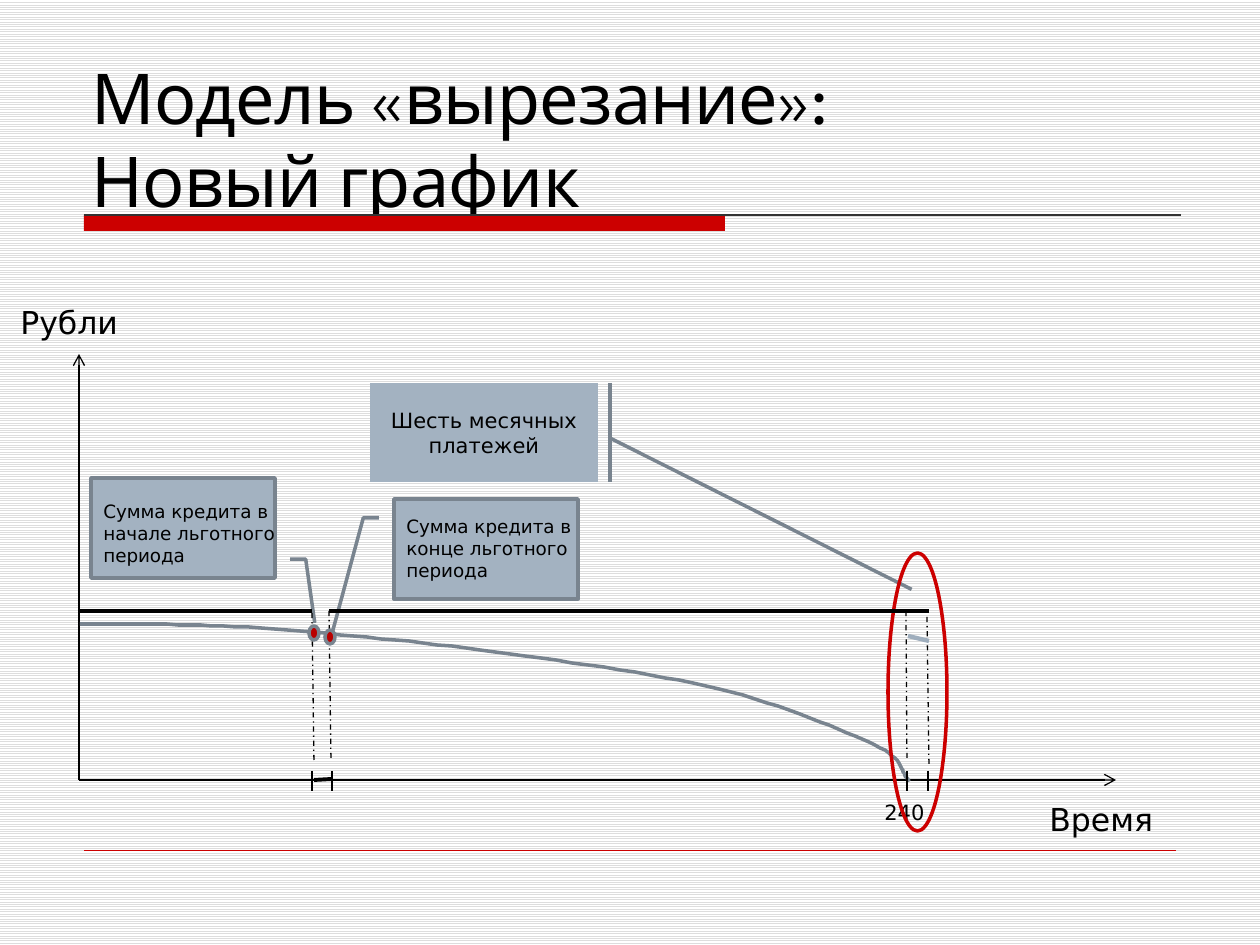
from dataclasses import dataclass

from lxml import etree
from pptx import Presentation
from pptx.dml.color import RGBColor
from pptx.enum.dml import MSO_LINE, MSO_PATTERN
from pptx.enum.shapes import MSO_CONNECTOR, MSO_SHAPE
from pptx.enum.text import MSO_ANCHOR, MSO_AUTO_SIZE, PP_ALIGN
from pptx.oxml.ns import qn
from pptx.util import Pt

PX = 914400 / 126
TITLE_ONLY = 5
STRAIGHT = MSO_CONNECTOR.STRAIGHT
DASH_DOT = MSO_LINE.DASH_DOT
OVAL = MSO_SHAPE.OVAL
RECTANGLE = MSO_SHAPE.RECTANGLE
BENT_CALLOUT = MSO_SHAPE.LINE_CALLOUT_2
ACCENT_CALLOUT = MSO_SHAPE.LINE_CALLOUT_1_ACCENT_BAR


@dataclass(frozen=True)
class Theme:
    ink: str = "000000"
    rule: str = "333333"
    red: str = "CC0000"
    dot: str = "B90000"
    panel: str = "A3B2C1"
    outline: str = "79848F"
    pale: str = "9FAEBD"
    stripe: str = "DDDDDD"
    paper: str = "FFFFFF"
    title_font: str = "League Spartan"
    body_font: str = "DejaVu Sans"
    title: float = 40
    axis: float = 18
    label: float = 12
    note: float = 10.5
    hair: float = 0.25
    thin: float = 0.75
    medium: float = 2
    thick: float = 2.25


def px(value):
    return round(value * PX)


def rgb(value):
    return RGBColor.from_string(value)


def bezier_points(start, segments, steps=16):
    """Points along a chain of cubic Bezier segments."""
    points = []
    for a, b, end in segments:
        for step in range(1, steps + 1):
            t = step / steps
            u = 1 - t
            points.append(tuple(
                u**3 * p + 3 * u * u * t * q + 3 * u * t * t * r + t**3 * s
                for p, q, r, s in zip(start, a, b, end)))
        start = end
    return points


class Canvas:
    """The current slide and the style it is drawn in."""

    def __init__(self, slide, theme):
        self.slide = slide
        self.shapes = slide.shapes
        self.theme = theme

    def background(self):
        fill = self.slide.background.fill
        fill.patterned()
        fill.pattern = MSO_PATTERN.LIGHT_HORIZONTAL
        fill.fore_color.rgb = rgb(self.theme.stripe)
        fill.back_color.rgb = rgb(self.theme.paper)

    def add_run(self, paragraph, text, size, font=None):
        run = paragraph.add_run()
        run.text = text
        run.font.size = Pt(size)
        run.font.name = font or self.theme.body_font
        run.font.color.rgb = rgb(self.theme.ink)
        return run

    def title(self, lines, x, y, w, h):
        title = self.shapes.title
        title.left, title.top, title.width, title.height = map(px, (x, y, w, h))
        frame = title.text_frame
        frame.auto_size = MSO_AUTO_SIZE.NONE
        frame.vertical_anchor = MSO_ANCHOR.TOP
        frame.margin_top, frame.margin_bottom = px(12), 0
        for index, line in enumerate(lines):
            paragraph = frame.add_paragraph() if index else frame.paragraphs[0]
            paragraph.alignment = PP_ALIGN.LEFT
            paragraph.line_spacing = Pt(self.theme.title * 1.2)
            run = self.add_run(paragraph, line, self.theme.title, self.theme.title_font)
            run._r.get_or_add_rPr().set("spc", "-40")

    def text(self, text, size, x, y, w, h):
        frame = self.shapes.add_textbox(*map(px, (x, y, w, h))).text_frame
        frame.word_wrap = True
        self.add_run(frame.paragraphs[0], text, size)

    def shape(self, kind, x, y, w, h, fill=None, line=None, adjustments=()):
        shape = self.shapes.add_shape(kind, *map(px, (x, y, w, h)))
        for index, value in enumerate(adjustments):
            shape.adjustments[index] = value
        if fill:
            shape.fill.solid()
            shape.fill.fore_color.rgb = rgb(fill)
        else:
            shape.fill.background()
        self.outline(shape, line)
        return shape

    def outline(self, shape, color):
        shape.shadow.inherit = False
        if color:
            shape.line.color.rgb = rgb(color)
            shape.line.width = Pt(self.theme.medium)
        else:
            shape.line.fill.background()

    def callout(self, kind, x, y, w, h, adjustments):
        return self.shape(kind, x, y, w, h, self.theme.panel,
                          self.theme.outline, adjustments)

    def line(self, x1, y1, x2, y2, width, color=None, dash=None, arrow=False):
        line = self.shapes.add_connector(STRAIGHT, *map(px, (x1, y1, x2, y2)))
        line.line.color.rgb = rgb(color or self.theme.ink)
        line.line.width = Pt(width)
        if dash:
            line.line.dash_style = dash
        properties = line._element.spPr
        if arrow:
            etree.SubElement(properties.find(qn("a:ln")), qn("a:tailEnd"), type="arrow")
        etree.SubElement(properties, qn("a:effectLst"))

    def curve(self, start, segments):
        builder = self.shapes.build_freeform(*start, scale=PX)
        builder.add_line_segments(bezier_points(start, segments), close=False)
        shape = builder.convert_to_shape()
        shape.fill.background()
        self.outline(shape, self.theme.outline)


def draw(canvas):
    theme = canvas.theme
    canvas.background()
    canvas.shape(RECTANGLE, 84, 215, 641, 16, theme.red)
    canvas.line(84, 215, 1181, 215, theme.thin, theme.rule)
    canvas.line(84, 850, 1176, 850, theme.hair, theme.red)
    canvas.title(["Модель «вырезание»:", "Новый график"], 79, 42, 1103, 167)

    period_start = canvas.callout(BENT_CALLOUT, 91, 478, 184, 100,
                                  (0.188, -0.083, 0.188, -0.167, -0.449, -0.216))
    period_start.rotation = 180
    canvas.text("Сумма кредита в начале льготного периода", theme.note, 91, 494, 209, 79)
    canvas.callout(BENT_CALLOUT, 394, 499, 184, 100,
                   (0.188, -0.083, 0.188, -0.167, 1.331, -0.335))

    origin_x, origin_y, payment_y = 79, 780, 611
    canvas.line(origin_x, origin_y, 1116, origin_y, theme.thin, arrow=True)
    canvas.line(origin_x, origin_y, origin_x, 354, theme.thin, arrow=True)
    canvas.text("Рубли", theme.axis, 8, 297, 189, 50)
    canvas.text("Время", theme.axis, 1037, 794, 189, 50)
    canvas.text("240", theme.label, 872, 793, 69, 38)

    canvas.curve((80, 624), [
        ((137, 624), (194, 624), (261, 628)),
        ((328, 633), (404, 640), (480, 650)),
        ((557, 660), (654, 673), (719, 689)),
        ((785, 705), (844, 731), (875, 745)),
        ((906, 760), (901, 772), (906, 777)),
        ((911, 782), (908, 780), (906, 776)),
    ])
    for month_x in (312, 332, 907, 928):
        canvas.line(month_x, 771, month_x, 791, theme.thin)
    for top_x, top_y, bottom_x in ((312, 613, 314), (329, 611, 331),
                                   (906, 611, 907), (927, 617, 929)):
        canvas.line(top_x, top_y, bottom_x, top_y + 149, theme.thin, dash=DASH_DOT)

    payments = canvas.callout(ACCENT_CALLOUT, 370, 383, 228, 99,
                              (0.558, 1.054, 2.085, 2.376))
    frame = payments.text_frame
    frame.word_wrap = True
    frame.vertical_anchor = MSO_ANCHOR.MIDDLE
    frame.paragraphs[0].alignment = PP_ALIGN.CENTER
    canvas.add_run(frame.paragraphs[0], "Шесть месячных платежей", theme.label)

    canvas.shape(OVAL, 888, 553, 59, 278, line=theme.red)
    for start_x, end_x in ((origin_x, 312), (329, 929)):
        canvas.line(start_x, payment_y, end_x, payment_y, theme.thick)
    canvas.line(314, 780, 332, 779, theme.thick)
    canvas.line(908, 636, 929, 641, 2.5, theme.pale)
    for dot_x, dot_y in ((309, 626), (325, 630)):
        canvas.shape(OVAL, dot_x, dot_y, 10, 14, theme.dot, theme.outline)
    canvas.text("Сумма кредита в конце льготного периода", theme.note, 394, 509, 209, 79)


def main():
    deck = Presentation()
    deck.slide_width, deck.slide_height = px(1260), px(945)
    slide = deck.slides.add_slide(deck.slide_layouts[TITLE_ONLY])
    draw(Canvas(slide, Theme()))
    deck.save("out.pptx")


if __name__ == "__main__":
    main()
